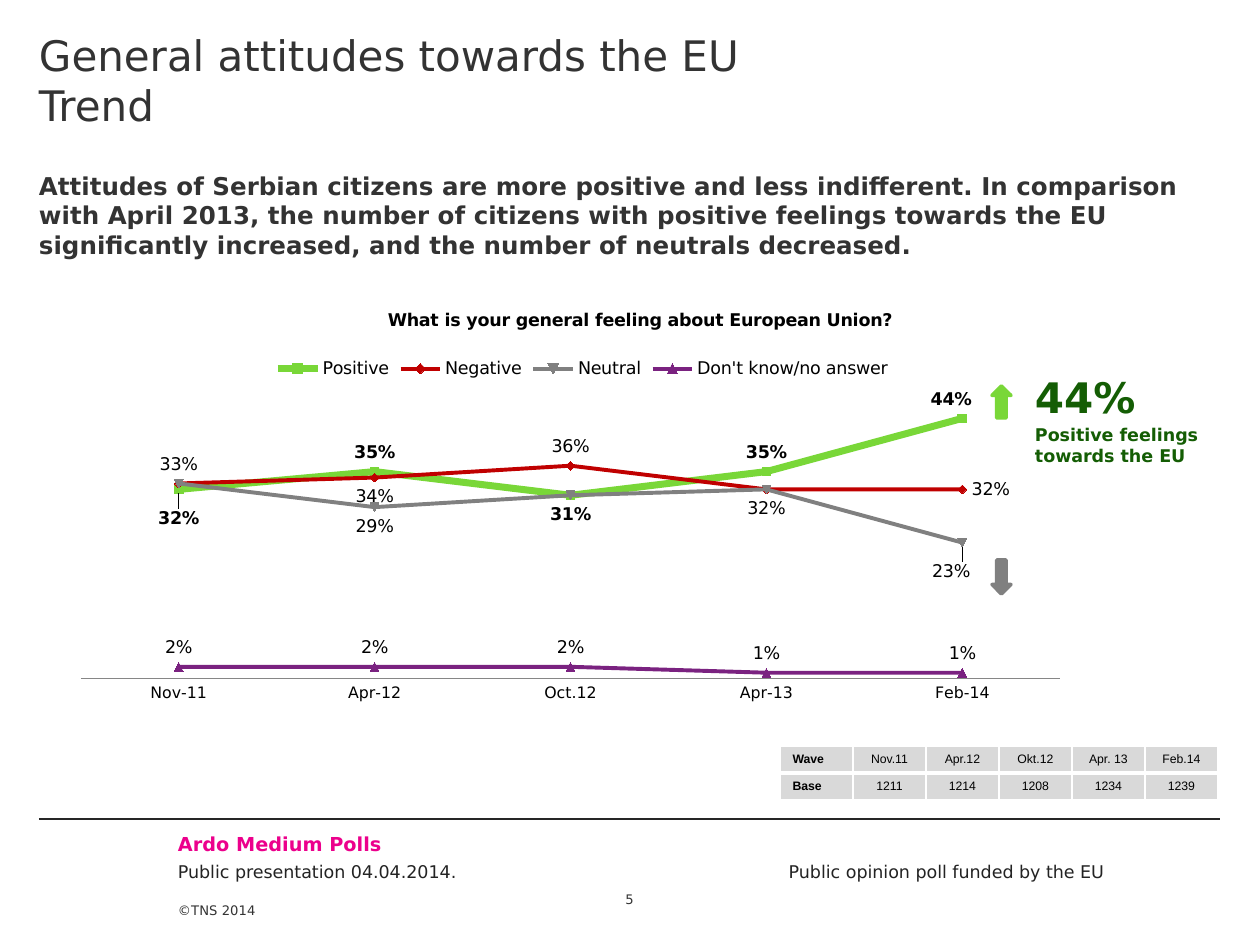
import lxml.etree
import pptx
import pptx.chart.data
import pptx.dml.color
import pptx.enum.chart
import pptx.enum.shapes
import pptx.enum.text
import pptx.oxml.ns
import pptx.util

SCALE = 914400 / 126
FACE = "DejaVu Sans"
qn = pptx.oxml.ns.qn
Pt = pptx.util.Pt
rgb = pptx.dml.color.RGBColor.from_string
sub = lxml.etree.SubElement
Align = pptx.enum.text.PP_ALIGN
Anchor = pptx.enum.text.MSO_ANCHOR
Kind = pptx.enum.shapes.MSO_SHAPE
Spot = pptx.enum.chart.XL_LABEL_POSITION


def px(*vals):
    return [round(v * SCALE) for v in vals]


def place(node, at, **sizes):
    for old in node.findall(qn("c:layout")):
        node.remove(old)
    frame = lxml.etree.Element(qn("c:layout"))
    node.insert(at, frame)
    man = sub(frame, qn("c:manualLayout"))
    for key, val in sizes.items():
        sub(man, qn("c:" + key)).set("val", str(val))


deck = pptx.Presentation()
deck.slide_width, deck.slide_height = px(1260, 945)
slide = deck.slides.add_slide(deck.slide_layouts[1])
shapes = slide.shapes

heads = [
    (shapes.title, "General attitudes towards the EU \vTrend", (39, 0, 1181, 142), 24, False),
    (slide.placeholders[1],
     "Attitudes of Serbian citizens are more positive and less indifferent. "
     "In comparison with April 2013, the number of citizens with positive feelings "
     "towards the EU significantly increased, and the number of neutrals decreased.",
     (39, 142, 1181, 105), 14, True),
]
for box, text, rect, size, bold in heads:
    box.left, box.top, box.width, box.height = px(*rect)
    frame = box.text_frame
    frame.text = text
    frame.word_wrap = True
    frame.auto_size = pptx.enum.text.MSO_AUTO_SIZE.NONE
    frame.vertical_anchor = Anchor.TOP
    frame.margin_left, frame.margin_top, frame.margin_right, frame.margin_bottom = px(0, 29, 0, 0)
    para = frame.paragraphs[0]
    props = para._p.get_or_add_pPr()
    props.set("marL", "0")
    props.set("indent", "0")
    sub(props, qn("a:buNone"))
    para.alignment = Align.LEFT
    para.space_before = Pt(0)
    font = para.font
    font.name, font.size, font.bold = FACE, Pt(size), bold
    font.color.rgb = rgb("333333")

rule = shapes.add_connector(pptx.enum.shapes.MSO_CONNECTOR.STRAIGHT, *px(39, 819, 1220, 819))
rule.line.color.rgb = rgb("262626")
rule.line.width = Pt(0.75)
sub(rule.element.spPr, qn("a:effectLst"))

data = pptx.chart.data.CategoryChartData(number_format="0\\%")
data.categories = ["Nov-11", "Apr-12", "Oct.12", "Apr-13", "Feb-14"]
lines = [
    ("Positive", (32, 35, 31, 35, 44), "79D738", 4,
     {0: Spot.BELOW, 1: Spot.ABOVE, 3: Spot.ABOVE, 4: Spot.ABOVE}),
    ("Negative", (33, 34, 36, 32, 32), "C00000", 2.25,
     {1: Spot.BELOW, 2: Spot.ABOVE, 4: Spot.RIGHT}),
    ("Neutral", (33, 29, 31, 32, 23), "808080", 2.25,
     {0: Spot.ABOVE, 1: Spot.BELOW, 2: Spot.BELOW, 3: Spot.BELOW, 4: Spot.BELOW}),
    ("Don't know/no answer", (2, 2, 2, 1, 1), "7A2280", 2.25,
     {i: Spot.ABOVE for i in range(5)}),
]
for name, vals, *rest in lines:
    data.add_series(name, vals)
chart = shapes.add_chart(
    pptx.enum.chart.XL_CHART_TYPE.LINE_MARKERS, *px(47, 286, 1126, 485), data).chart
chart.font.name, chart.font.size = FACE, Pt(10)
chart.font.color.rgb = rgb("000000")

chart.has_title = True
frame = chart.chart_title.text_frame
frame.text = "What is your general feeling about European Union? "
font = frame.paragraphs[0].font
font.name, font.size, font.bold = FACE, Pt(10), True
font.color.rgb = rgb("000000")

chart.has_legend = True
chart.legend.position = pptx.enum.chart.XL_LEGEND_POSITION.TOP
chart.legend.include_in_layout = False
chart.legend.font.size = Pt(10)

axis = chart.value_axis
axis.minimum_scale, axis.maximum_scale = 0, 50
axis.has_major_gridlines = False
axis.visible = False
axis = chart.category_axis
axis.major_tick_mark = pptx.enum.chart.XL_TICK_MARK.NONE
axis.tick_labels.font.size = Pt(9)
axis.format.line.color.rgb = rgb("868686")

for line, (name, vals, hue, width, spots) in zip(chart.plots[0].series, lines):
    line.smooth = False
    line.format.line.color.rgb = rgb(hue)
    line.format.line.width = Pt(width)
    mark = line.marker
    mark.size = 5
    mark.format.fill.solid()
    mark.format.fill.fore_color.rgb = rgb(hue)
    mark.format.line.color.rgb = rgb(hue)
    line.data_labels.show_value = False
    line.data_labels.number_format = "0\\%"
    line.data_labels.number_format_is_linked = False
    for i, spot in spots.items():
        label = line.points[i].data_label
        font = label.font
        font.name, font.size = FACE, Pt(10)
        font.bold = name == "Positive" or (name == "Neutral" and i == 2)
        font.color.rgb = rgb("000000")
        label.position = spot

root = chart.element
place(root.find(".//" + qn("c:plotArea")), 0, layoutTarget="inner", xMode="edge", yMode="edge",
      x=0.03, y=0.2, w=0.87, h=0.61)
place(chart.chart_title.element, 1, xMode="edge", yMode="edge", x=0.3, y=0.04)
place(root.find(".//" + qn("c:legend")), 1, xMode="edge", yMode="edge", x=0.2, y=0.14)
rows = list(root.iter(qn("c:ser")))
for row, spot, x, y in [(0, 0, 0, 0.02), (0, 4, -0.01, 0), (2, 4, -0.01, 0.02)]:
    for label in rows[row].iter(qn("c:dLbl")):
        if label.find(qn("c:idx")).get("val") == str(spot):
            place(label, 1, x=x, y=y)

for kind, top, height, hue in [
    (Kind.UP_ARROW, 386, 32, "79D738"),
    (Kind.DOWN_ARROW, 560, 34, "808080"),
]:
    arrow = shapes.add_shape(kind, *px(992, top, 19, height))
    arrow.shadow.inherit = False
    arrow.fill.solid()
    arrow.fill.fore_color.rgb = rgb(hue)
    arrow.line.color.rgb = rgb(hue)
    arrow.line.width = Pt(2)

table = shapes.add_table(2, 6, *px(780, 746, 438, 54)).table
table.first_row = table.horz_banding = False
cells = [
    ("Wave", "Nov.11", "Apr.12", "Okt.12", "Apr. 13", "Feb.14"),
    ("Base", "1211", "1214", "1208", "1234", "1239"),
]
for r, row in enumerate(cells):
    table.rows[r].height = px(27)[0]
    for c, text in enumerate(row):
        table.columns[c].width = px(73)[0]
        cell = table.cell(r, c)
        cell.text = text
        cell.margin_top = cell.margin_bottom = 0
        cell.vertical_anchor = Anchor.MIDDLE
        para = cell.text_frame.paragraphs[0]
        para.alignment = Align.CENTER if c else Align.LEFT
        font = para.font
        font.name, font.size, font.bold = "Arial", Pt(7), c == 0
        font.color.rgb = rgb("000000")
        for side in "LRTB":
            thick = 3 if (r, side) in [(0, "B"), (1, "T")] else 1
            edge = sub(cell._tc.get_or_add_tcPr(), qn("a:ln" + side), w=str(Pt(thick)))
            sub(sub(edge, qn("a:solidFill")), qn("a:srgbClr"), val="FFFFFF")
        cell.fill.solid()
        cell.fill.fore_color.rgb = rgb("D9D9D9")

none = (0, 0, 0, 0)
pad = (13, 6, 13, 6)
notes = [
    ("©TNS 2014", (178, 872, 105, 73), 7.5, "333333", False, Align.LEFT, Anchor.BOTTOM, (0, 0, 0, 37)),
    ("Ardo Medium Polls", (178, 832, 417, 24), 11, "EC008C", True, Align.LEFT, Anchor.TOP, none),
    ("Public presentation 04.04.2014.", (178, 861, 428, 21), 10, "232323", False, Align.LEFT, Anchor.TOP, none),
    ("Public opinion poll funded by the EU", (676, 861, 428, 21), 10, "232323", False, Align.RIGHT, Anchor.TOP, none),
    ("5", (595, 872, 69, 35), 7.5, "333333", False, Align.CENTER, Anchor.BOTTOM, none),
    ("44%", (1022, 366, 140, 53), 24, "145D04", True, Align.LEFT, Anchor.TOP, pad),
    ("Positive feelings towards the EU", (1022, 418, 193, 55), 10, "145D04", True, Align.LEFT, Anchor.TOP, pad),
]
for text, rect, size, hue, bold, align, anchor, inset in notes:
    frame = shapes.add_textbox(*px(*rect)).text_frame
    frame.text = text
    frame.word_wrap = True
    frame.vertical_anchor = anchor
    frame.margin_left, frame.margin_top, frame.margin_right, frame.margin_bottom = px(*inset)
    para = frame.paragraphs[0]
    para.alignment = align
    font = para.font
    font.name, font.size, font.bold = FACE, Pt(size), bold
    font.color.rgb = rgb(hue)

deck.save("out.pptx")
